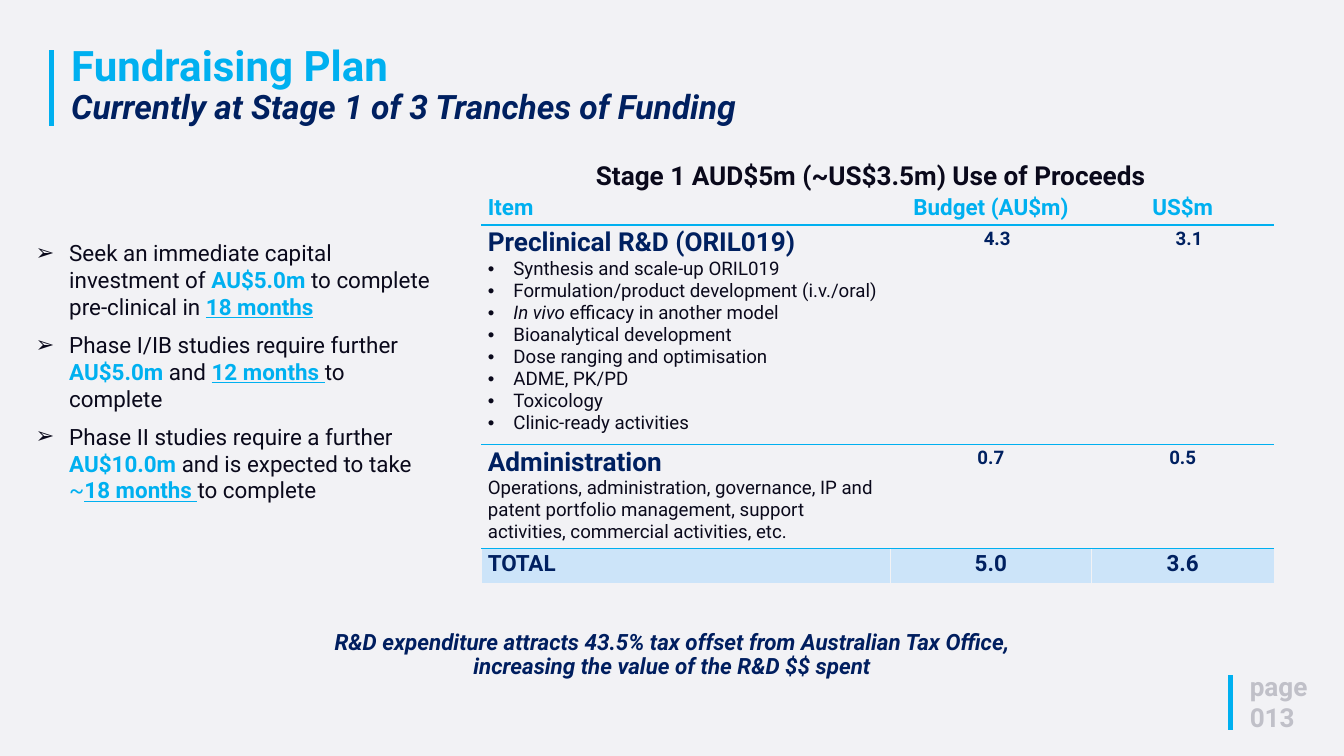
from lxml import etree
from pptx import Presentation
from pptx.dml.color import RGBColor
from pptx.enum.shapes import MSO_CONNECTOR
from pptx.enum.text import MSO_ANCHOR as ANCHOR, MSO_AUTO_SIZE as AUTO, PP_ALIGN as ALIGN
from pptx.oxml import parse_xml
from pptx.oxml.ns import nsdecls, qn
from pptx.util import Inches, Pt

CYAN, NAVY, INK, GREY = "00B0F0", "002060", "0A091B", "C0C0C8"
PAPER, PALE = "F2F2F5", "CCE4F9"
rgb = RGBColor.from_string


def add_runs(p, size, *runs):
    """Add (text, colour, style) runs; style holds any of the letters b, i, u."""
    for text, color, style in runs:
        r = p.add_run()
        r.text = text
        f = r.font
        f.name, f.size, f.color.rgb = "Roboto", Pt(size), rgb(color)
        f.bold, f.italic, f.underline = "b" in style, "i" in style, "u" in style


def add_bullet(p, char, margin, hang):
    pPr = p._p.get_or_add_pPr()
    pPr.set("marL", str(Inches(margin)))
    pPr.set("indent", str(-Inches(hang)))
    for xml in (f'<a:buClr {nsdecls("a")}><a:srgbClr val="{INK}"/></a:buClr>',
                f'<a:buFont {nsdecls("a")} typeface="Arial"/>',
                f'<a:buChar {nsdecls("a")} char="{char}"/>'):
        pPr.append(parse_xml(xml))


prs = Presentation()
prs.slide_width, prs.slide_height = Inches(20), Inches(11.25)
s = prs.slides.add_slide(prs.slide_layouts[1])
s.background.fill.solid()
s.background.fill.fore_color.rgb = rgb(PAPER)

# Accent bars beside the title and the page number
for x, top, bottom in [(0.77, 0.75, 1.88), (18.31, 10.05, 10.86)]:
    bar = s.shapes.add_connector(MSO_CONNECTOR.STRAIGHT, Inches(x), Inches(top),
                                 Inches(x), Inches(bottom))
    bar.line.color.rgb, bar.line.width = rgb(CYAN), Pt(5)
    etree.SubElement(bar._element.spPr, qn("a:effectLst"))

# Title
title = s.shapes.title
title.left, title.top, title.width, title.height = map(Inches, (0.96, 0.62, 11.46, 1.33))
tf = title.text_frame
tf.auto_size, tf.word_wrap, tf.vertical_anchor = AUTO.NONE, True, ANCHOR.TOP
p = tf.paragraphs[0]
p.alignment, p.line_spacing = ALIGN.LEFT, 0.9
add_runs(p, 45, ("Fundraising Plan", CYAN, "b"))
p.add_line_break()
add_runs(p, 36, ("Currently at Stage 1 of 3 Tranches of Funding", NAVY, "bi"))

# Funding stages
stages = [
    [("Seek an immediate capital investment of ", INK, ""), ("AU$5.0m ", CYAN, "b"),
     ("to complete pre-clinical in ", INK, ""), ("18 months", CYAN, "bu")],
    [("Phase I/IB studies require further ", INK, ""), ("AU$5.0m ", CYAN, "b"),
     ("and ", INK, ""), ("12 months ", CYAN, "bu"), ("to complete", INK, "")],
    [("Phase II studies require a further ", INK, ""), ("AU$10.0m ", CYAN, "b"),
     ("and is expected to take ", INK, ""), ("~", CYAN, ""),
     ("18 months ", CYAN, "bu"), ("to complete", INK, "")],
]
body = s.placeholders[1]
body.left, body.top, body.width, body.height = map(Inches, (0.18, 3.23, 6.51, 4.59))
tf = body.text_frame
tf.auto_size, tf.word_wrap, tf.vertical_anchor = AUTO.NONE, True, ANCHOR.MIDDLE
for i, runs in enumerate(stages):
    p = tf.add_paragraph() if i else tf.paragraphs[0]
    add_bullet(p, "➢", 0.75, 0.5)
    p.space_before, p.space_after = Pt(0), Pt(12)
    add_runs(p, 24, *runs)

# Use of proceeds
widths, heights = [6.08, 2.99, 2.72], [0.49, 3.26, 1.55, 0.52]
frame = s.shapes.add_table(4, 3, Inches(7.17), Inches(2.86),
                           Inches(sum(widths)), Inches(sum(heights)))
table = frame.table
table.first_row = table.horz_banding = False
for column, width in zip(table.columns, widths):
    column.width = Inches(width)
for row, height in zip(table.rows, heights):
    row.height = Inches(height)

rows = [  # cell texts, text size of the first column and of the figures, colour
    (["Item", "Budget (AU$m)", "US$m"], 24, 24, CYAN),
    (["Preclinical R&D (ORIL019)", "4.3", "3.1"], 28, 20, NAVY),
    (["Administration", "0.7", "0.5"], 28, 20, NAVY),
    (["TOTAL", "5.0", "3.6"], 24, 24, NAVY),
]
rules = [(PAPER, 1), (CYAN, 3), (CYAN, 1), (CYAN, 1), (PAPER, 1)]
for i, (texts, item_size, figure_size, color) in enumerate(rows):
    for j, text in enumerate(texts):
        cell = table.cell(i, j)
        cell.margin_left = cell.margin_right = Inches(0.09)
        cell.margin_top = cell.margin_bottom = Inches(0.04)
        tcPr = cell._tc.get_or_add_tcPr()
        edges = [("L", PAPER, 1), ("R", PAPER, 1), ("T", *rules[i]), ("B", *rules[i + 1])]
        for side, edge_color, width in edges:
            tcPr.append(parse_xml(
                f'<a:ln{side} {nsdecls("a")} w="{Pt(width)}"><a:solidFill>'
                f'<a:srgbClr val="{edge_color}"/></a:solidFill></a:ln{side}>'))
        if texts[0] == "TOTAL":
            cell.fill.solid()
            cell.fill.fore_color.rgb = rgb(PALE)
        else:
            cell.fill.background()
        p = cell.text_frame.paragraphs[0]
        p.alignment = ALIGN.CENTER if j else ALIGN.LEFT
        if i == 1 and j:
            p._p.get_or_add_pPr().set("marL", str(Inches(0.19)))
        add_runs(p, figure_size if j else item_size, (text, color, "b"))

activities = [
    [("Synthesis and scale-up ORIL019", INK, "")],
    [("Formulation/product development (i.v./oral)", INK, "")],
    [("In vivo ", INK, "i"), ("efficacy in another model", INK, "")],
    [("Bioanalytical development", INK, "")],
    [("Dose ranging and optimisation", INK, "")],
    [("ADME, PK/PD", INK, "")],
    [("Toxicology", INK, "")],
    [("Clinic-ready activities", INK, "")],
]
for runs in activities:
    p = table.cell(1, 0).text_frame.add_paragraph()
    add_bullet(p, "•", 0.38, 0.38)
    add_runs(p, 20, *runs)
p = table.cell(2, 0).text_frame.add_paragraph()
add_runs(p, 20, ("Operations, administration, governance, IP and patent portfolio management, "
                 "support activities, commercial activities, etc.", INK, ""))

# Table heading, tax note and page number
notes = [
    ((8.77, 2.27, 8.58, 0.59), ["Stage 1 AUD$5m (~US$3.5m) Use of Proceeds"],
     28, INK, "b", ALIGN.LEFT, ANCHOR.TOP, 1.1),
    ((4.71, 9.34, 10.58, 0.81),
     ["R&D expenditure attracts 43.5% tax offset from Australian Tax Office, "
      "increasing the value of the R&D $$ spent"],
     24, "001E5F", "bi", ALIGN.CENTER, ANCHOR.MIDDLE, 0.9),
    ((18.5, 9.92, 1.4, 1.04), ["page", "013"], 28, GREY, "b", ALIGN.LEFT, ANCHOR.TOP, 1.0),
]
for box, lines, size, color, style, align, anchor, spacing in notes:
    tf = s.shapes.add_textbox(*map(Inches, box)).text_frame
    tf.word_wrap, tf.vertical_anchor = True, anchor
    for i, line in enumerate(lines):
        p = tf.add_paragraph() if i else tf.paragraphs[0]
        p.alignment, p.line_spacing = align, spacing
        add_runs(p, size, (line, color, style))

prs.save("out.pptx")
